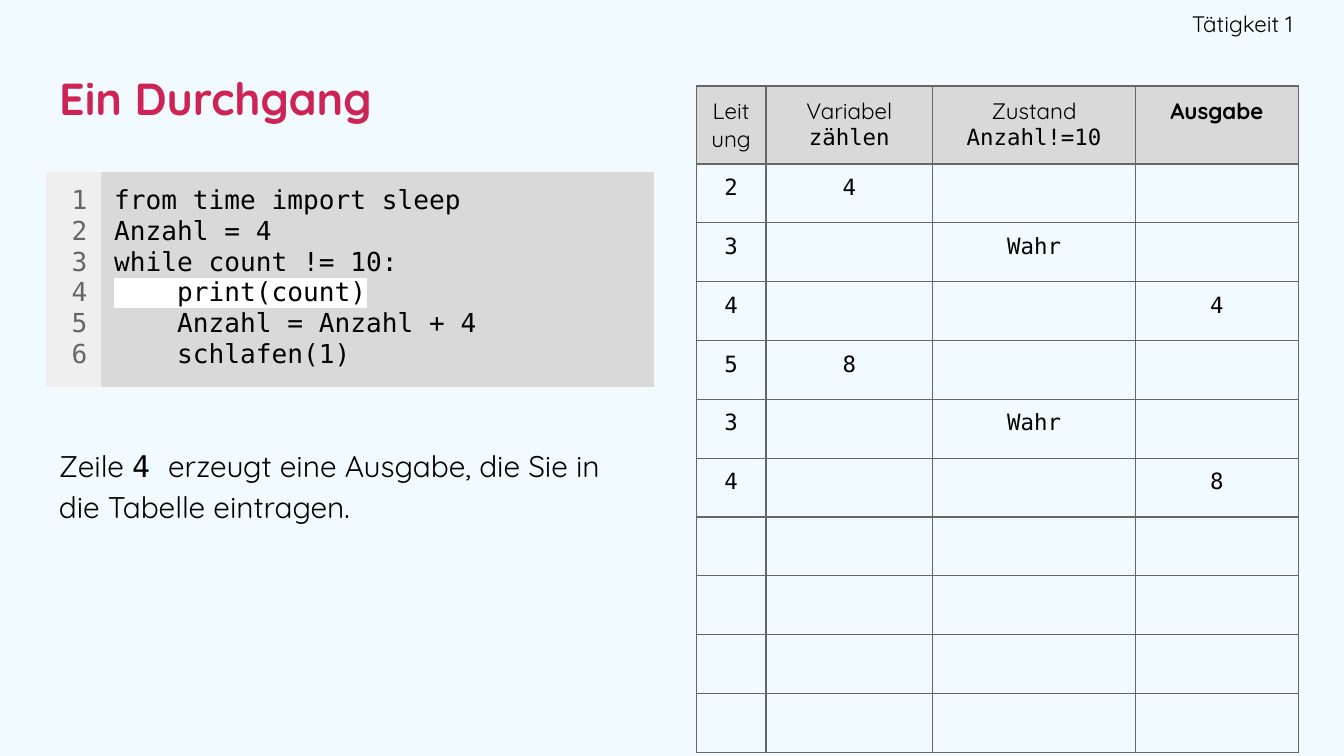
from lxml.etree import SubElement
from pptx import Presentation
from pptx.dml.color import RGBColor
from pptx.enum.text import MSO_ANCHOR, PP_ALIGN
from pptx.oxml.ns import qn
from pptx.util import Inches, Pt

COLORS = {"back": "F1FAFF", "title": "CD2355", "text": "000000", "grey": "666666",
          "head": "D9D9D9", "gutter": "EFEFEF", "mark": "FFFFFF"}
SANS, MONO = "Quicksand", "DejaVu Sans Mono"
SIDES = ("margin_left", "margin_top", "margin_right", "margin_bottom")


def write(frame, lines, align=PP_ALIGN.LEFT, color="text", **style):
    """Fill a text frame; each line is a list of (text, font name) runs."""
    for i, line in enumerate(lines):
        para = frame.paragraphs[0] if i == 0 else frame.add_paragraph()
        para.alignment = align
        for text, face in line:
            run = para.add_run()
            run.text = text
            run.font.color.rgb = RGBColor.from_string(COLORS[color])
            for key, value in {"name": face, "bold": False, **style}.items():
                setattr(run.font, key, value)


def make_table(left, top, widths, heights, inset, fills, line=None):
    """Add a table; fills colour the first row, line is the border colour, if any."""
    table = slide.shapes.add_table(len(heights), len(widths), Inches(left), Inches(top),
                                   Inches(sum(widths)), sum(heights)).table
    table.first_row = table.horz_banding = False
    for col, width in zip(table.columns, widths):
        col.width = Inches(width)
    for row, height in zip(table.rows, heights):
        row.height = height
    for cell in table.iter_cells():
        for side in SIDES:
            setattr(cell, side, Inches(inset))
        for side in "LRTB":
            edge = SubElement(cell._tc.get_or_add_tcPr(), qn(f"a:ln{side}"), w=str(Pt(0.75)))
            fill = SubElement(edge, qn("a:solidFill" if line else "a:noFill"))
            if line:
                SubElement(fill, qn("a:srgbClr"), val=COLORS[line])
        cell.fill.background()
    for cell, color in zip(table.rows[0].cells, fills):
        cell.fill.solid()
        cell.fill.fore_color.rgb = RGBColor.from_string(COLORS[color])
    return table


deck = Presentation()
deck.slide_width, deck.slide_height = Inches(10), Inches(10) * 9 // 16
slide = deck.slides.add_slide(deck.slide_layouts[5])
slide.background.fill.solid()
slide.background.fill.fore_color.rgb = RGBColor.from_string(COLORS["back"])

# Title, label and explanation
title = slide.shapes.title
label = slide.shapes.add_textbox(0, 0, 0, 0)
note = slide.shapes.add_textbox(0, 0, 0, 0)
for shape, box, anchor in ((title, (0.34, 0.34, 9.32, 0.77), MSO_ANCHOR.MIDDLE),
                           (label, (7.48, 0, 2.14, 0.35), MSO_ANCHOR.MIDDLE),
                           (note, (0.34, 3.19, 4.48, 1.58), MSO_ANCHOR.TOP)):
    for key, value in zip(("left", "top", "width", "height"), box):
        setattr(shape, key, Inches(value))
    frame = shape.text_frame
    frame.word_wrap, frame.vertical_anchor = True, anchor
    for side in SIDES:
        setattr(frame, side, Inches(0.1))
label.text_frame.margin_right = 0
write(title.text_frame, [[("Ein Durchgang", SANS)]], color="title", size=Pt(24), bold=True)
write(label.text_frame, [[("Tätigkeit 1", SANS)]], PP_ALIGN.RIGHT, size=Pt(12))
write(note.text_frame, [[("Zeile ", SANS), ("4 ", MONO),
                         ("erzeugt eine Ausgabe, die Sie in die Tabelle eintragen.", SANS)]],
      size=Pt(16))
para = note.text_frame.paragraphs[0]
para.line_spacing, para.space_after = 1.15, Pt(16)

# Code listing with line numbers
code = ["from time import sleep", "Anzahl = 4", "while count != 10:",
        "    print(count)", "    Anzahl = Anzahl + 4", "    schlafen(1)"]
listing = make_table(0.34, 1.28, (0.41, 4.12), [Inches(1.56)], 0.1, ("gutter", "head"))
gutter, body = (cell.text_frame for cell in listing.iter_cells())
write(gutter, [[(str(n), MONO)] for n in range(1, len(code) + 1)],
      PP_ALIGN.RIGHT, color="grey", size=Pt(14))
write(body, [[(line, MONO)] for line in code], size=Pt(14))
props = body.paragraphs[3].runs[0]._r.get_or_add_rPr()
mark = SubElement(props, qn("a:highlight"))
SubElement(mark, qn("a:srgbClr"), val=COLORS["mark"])
props.find(qn("a:solidFill")).addnext(mark)

# Trace table
heads = [[[("Leitung", SANS)]],
         [[("Variabel", SANS)], [("zählen", MONO)]],
         [[("Zustand", SANS)], [("Anzahl!=10", MONO)]],
         [[("Ausgabe", SANS)]]]
steps = [("2", "4", "", ""), ("3", "", "Wahr", ""), ("4", "", "", "4"),
         ("5", "8", "", ""), ("3", "", "Wahr", ""), ("4", "", "", "8")]
steps += [("",) * 4] * 4
trace = make_table(5.18, 0.64, (0.52, 1.24, 1.51, 1.21),
                   [Inches(0.58)] + [Inches(4.38) // 10] * len(steps),
                   0.08, ["head"] * 4, "grey")
for c, lines in enumerate(heads):
    write(trace.cell(0, c).text_frame, lines, PP_ALIGN.CENTER, size=Pt(12), bold=c == 3)
for r, step in enumerate(steps, 1):
    for c, value in enumerate(step):
        frame = trace.cell(r, c).text_frame
        if value:
            write(frame, [[(value, MONO)]], PP_ALIGN.CENTER, size=Pt(12))
        else:
            SubElement(frame.paragraphs[0]._p, qn("a:endParaRPr"), sz="1200")

deck.save("out.pptx")
